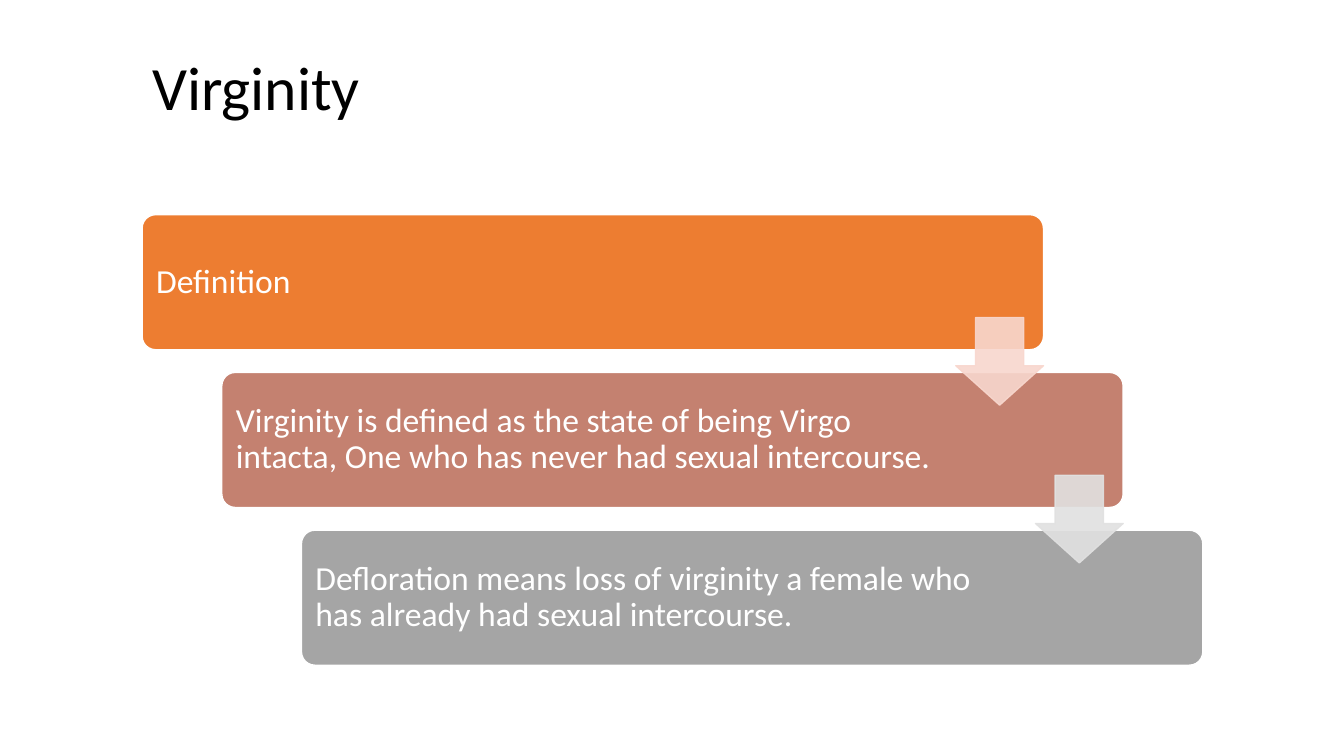
from lxml import etree
from pptx import Presentation
from pptx.dml.color import RGBColor
from pptx.enum.shapes import MSO_SHAPE
from pptx.enum.text import MSO_ANCHOR, PP_ALIGN
from pptx.oxml.ns import qn
from pptx.util import Inches, Pt

ROUNDED = MSO_SHAPE.ROUNDED_RECTANGLE
DOWN_ARROW = MSO_SHAPE.DOWN_ARROW
MIDDLE = MSO_ANCHOR.MIDDLE
LEFT = PP_ALIGN.LEFT

FONT = "Calibri"
COLORS = {
    "black": "000000",
    "white": "FFFFFF",
    "orange": "ED7D31",
    "rose": "C48170",
    "gray": "A5A5A5",
    "pale_rose": "F8D7CE",
    "pale_gray": "E1E1E1",
}

# text, card colour, text width, colour of the arrow to the next card
STEPS = [
    ("Definition", "orange", 7.49, "pale_rose"),
    ("Virginity is defined as the state of being Virgo intacta, "
     "One who has never had sexual intercourse.", "rose", 7.2, "pale_gray"),
    ("Defloration means loss of virginity a female who has already had "
     "sexual intercourse.", "gray", 7.2, None),
]
CARD_WIDTH, CARD_HEIGHT = 8.94, 1.34
ARROW_SIZE, ARROW_DROP = 0.87, 1.02
TEXT_INSET = 0.04


def rgb(name):
    return RGBColor.from_string(COLORS[name])


def add_text(slide, box, text, size, color, inset):
    left, top, width, height = map(Inches, box)
    frame = slide.shapes.add_textbox(left, top, width, height).text_frame
    frame.word_wrap = True
    frame.vertical_anchor = MIDDLE
    frame.margin_left = frame.margin_right = Inches(0.1)
    frame.margin_top = frame.margin_bottom = Inches(inset)
    paragraph = frame.paragraphs[0]
    paragraph.text = text
    paragraph.alignment = LEFT
    paragraph.line_spacing = 0.9
    paragraph.font.name = FONT
    paragraph.font.size = Pt(size)
    paragraph.font.color.rgb = rgb(color)


def add_block(slide, kind, box, adjustments, fill, line):
    left, top, width, height = map(Inches, box)
    shape = slide.shapes.add_shape(kind, left, top, width, height)
    shape.shadow.inherit = False
    for index, value in enumerate(adjustments):
        shape.adjustments[index] = value
    shape.fill.solid()
    shape.fill.fore_color.rgb = rgb(fill)
    shape.line.color.rgb = rgb(line)
    shape.line.width = Pt(1)
    return shape


def set_opacity(shape, percent):
    """Make both the fill and the outline of a shape partly transparent."""
    for color in shape._element.spPr.iter(qn("a:srgbClr")):
        etree.SubElement(color, qn("a:alpha")).set("val", str(percent * 1000))


def add_card(slide, box, text, text_width, fill):
    left, top, _, height = box
    add_block(slide, ROUNDED, box, [0.1], fill, "white")
    text_box = (left + TEXT_INSET, top + TEXT_INSET,
                text_width, height - 2 * TEXT_INSET)
    add_text(slide, text_box, text, 24, "white", 0.1)


def add_staircase(slide, box):
    """Spread the cards evenly along the diagonal, then lay arrows over them."""
    left, top, width, height = box
    gaps = len(STEPS) - 1
    step_x = (width - CARD_WIDTH) / gaps
    step_y = (height - CARD_HEIGHT) / gaps
    corners = [(left + i * step_x, top + i * step_y) for i in range(len(STEPS))]
    for (x, y), (text, fill, text_width, _) in zip(corners, STEPS):
        add_card(slide, (x, y, CARD_WIDTH, CARD_HEIGHT), text, text_width, fill)
    for (x, y), (_, _, _, color) in zip(corners[:-1], STEPS):
        arrow_box = (x + CARD_WIDTH - ARROW_SIZE, y + ARROW_DROP,
                     ARROW_SIZE, ARROW_SIZE)
        arrow = add_block(slide, DOWN_ARROW, arrow_box, [0.45, 0.55], color, color)
        # Down arrow: first the head length, then the shaft width
        arrow.adjustments[0], arrow.adjustments[1] = 0.55, 0.45
        set_opacity(arrow, 90)


def main():
    presentation = Presentation()
    presentation.slide_width = Inches(13.33)
    presentation.slide_height = Inches(7.5)
    slide = presentation.slides.add_slide(presentation.slide_layouts[6])
    add_text(slide, (1.41, 0.67, 11.15, 1.2), "Virginity\v", 44, "black", 0.05)
    add_staircase(slide, (1.41, 2.13, 10.52, 4.47))
    presentation.save("out.pptx")


if __name__ == "__main__":
    main()
